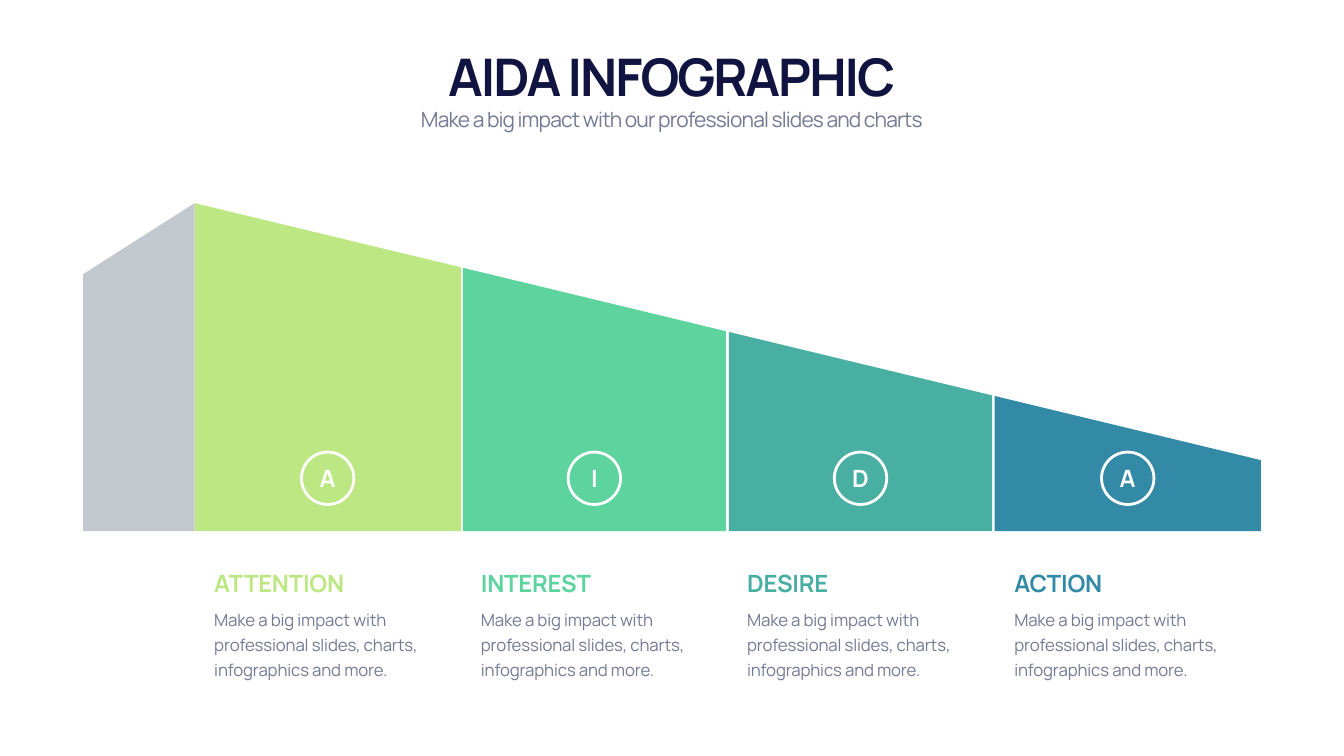
from dataclasses import dataclass

from pptx import Presentation
from pptx.dml.color import RGBColor
from pptx.enum.shapes import MSO_SHAPE
from pptx.enum.text import MSO_ANCHOR, MSO_AUTO_SIZE, PP_ALIGN
from pptx.slide import Slide
from pptx.text.text import TextFrame
from pptx.util import Inches, Pt

FONT = "Manrope"
NAVY = RGBColor(0x11, 0x13, 0x40)
SLATE = RGBColor(0x74, 0x79, 0x94)
WHITE = RGBColor(0xFF, 0xFF, 0xFF)
GRAY = RGBColor(0xC3, 0xC8, 0xCE)
LIME = RGBColor(0xBC, 0xE7, 0x83)
GREEN = RGBColor(0x5D, 0xD3, 0x9E)
TEAL = RGBColor(0x49, 0xAF, 0xA3)
BLUE = RGBColor(0x33, 0x8A, 0xA7)

WEDGE_LEFT, WEDGE_RIGHT = 3.86, 25.01
WEDGE_TOP, WEDGE_END, BASE = 4.03, 9.13, 10.54
SIDE_LEFT, SIDE_TOP = 1.65, 5.44
BADGE_SIZE, BADGE_TOP = 1.04, 8.97
TEXT_OFFSET, TEXT_WIDTH = 2.34, 4.5
DESCRIPTION = "Make a big impact with professional slides, charts, infographics and more."


@dataclass(frozen=True)
class Stage:
    name: str
    left: float
    right: float
    color: RGBColor

    @property
    def center(self) -> float:
        return (self.left + self.right) / 2


STAGES = (
    Stage("ATTENTION", WEDGE_LEFT, 9.14, LIME),
    Stage("INTEREST", 9.18, 14.4, GREEN),
    Stage("DESIRE", 14.46, 19.68, TEAL),
    Stage("ACTION", 19.73, WEDGE_RIGHT, BLUE),
)


def slope_y(x: float) -> float:
    """Height of the wedge's sloping edge at x."""
    share = (x - WEDGE_LEFT) / (WEDGE_RIGHT - WEDGE_LEFT)
    return WEDGE_TOP + share * (WEDGE_END - WEDGE_TOP)


def write_text(
    frame: TextFrame,
    text: str,
    *,
    size: float,
    color: RGBColor,
    bold: bool = False,
    spacing: float = 0,
    align: PP_ALIGN = PP_ALIGN.LEFT,
    anchor: MSO_ANCHOR = MSO_ANCHOR.TOP,
    line_spacing: Pt | float = 1.0,
    wrap: bool = True,
    grow: bool = True,
) -> None:
    frame.word_wrap = wrap
    frame.auto_size = MSO_AUTO_SIZE.SHAPE_TO_FIT_TEXT if grow else MSO_AUTO_SIZE.NONE
    frame.vertical_anchor = anchor
    frame.margin_left = frame.margin_right = Inches(0.09)
    frame.margin_top = frame.margin_bottom = Inches(0.05)
    paragraph = frame.paragraphs[0]
    paragraph.alignment = align
    paragraph.line_spacing = line_spacing
    paragraph.space_before = Pt(0)
    run = paragraph.add_run()
    run.text = text
    run.font.name = FONT
    run.font.size = Pt(size)
    run.font.bold = bold
    run.font.color.rgb = color
    run._r.get_or_add_rPr().set("spc", str(round(spacing * 100)))


def place(shape, left: float, top: float, width: float, height: float) -> None:
    shape.left, shape.top = Inches(left), Inches(top)
    shape.width, shape.height = Inches(width), Inches(height)


def add_panel(slide: Slide, left: float, left_top: float,
              right: float, right_top: float, color: RGBColor) -> None:
    """Draw an upright panel with a slanted top and its foot on the base line."""
    corners = [(left, left_top), (right, right_top), (right, BASE), (left, BASE)]
    points = [(Inches(x), Inches(y)) for x, y in corners]
    builder = slide.shapes.build_freeform(*points[0])
    builder.add_line_segments(points[1:], close=True)
    shape = builder.convert_to_shape()
    shape.shadow.inherit = False
    shape.fill.solid()
    shape.fill.fore_color.rgb = color
    shape.line.fill.background()


def add_badge(slide: Slide, stage: Stage) -> None:
    badge = slide.shapes.add_shape(
        MSO_SHAPE.OVAL, Inches(stage.center - BADGE_SIZE / 2), Inches(BADGE_TOP),
        Inches(BADGE_SIZE), Inches(BADGE_SIZE))
    badge.shadow.inherit = False
    badge.fill.background()
    badge.line.color.rgb = WHITE
    badge.line.width = Pt(4)
    write_text(badge.text_frame, stage.name[0], size=34, color=WHITE, bold=True,
               spacing=-0.3, align=PP_ALIGN.CENTER, anchor=MSO_ANCHOR.MIDDLE,
               wrap=False, grow=False)


def add_caption(slide: Slide, stage: Stage) -> None:
    left = Inches(stage.center - TEXT_OFFSET)
    heading = slide.shapes.add_textbox(left, Inches(11.22), Inches(TEXT_WIDTH), Inches(0.67))
    write_text(heading.text_frame, stage.name, size=34, color=stage.color, bold=True,
               spacing=-0.3, anchor=MSO_ANCHOR.BOTTOM)
    details = slide.shapes.add_textbox(left, Inches(11.94), Inches(TEXT_WIDTH), Inches(1.59))
    write_text(details.text_frame, DESCRIPTION, size=24, color=SLATE,
               spacing=-0.2, line_spacing=Pt(36))


def add_titles(slide: Slide) -> None:
    title, subtitle = slide.shapes.title, slide.placeholders[1]
    place(title, 1.66, 0.82, 23.33, 1.35)
    write_text(title.text_frame, "AIDA INFOGRAPHIC", size=74, color=NAVY, bold=True,
               spacing=-2.9, align=PP_ALIGN.CENTER, anchor=MSO_ANCHOR.BOTTOM)
    place(subtitle, 1.66, 2.07, 23.33, 0.61)
    write_text(subtitle.text_frame, "Make a big impact with our professional slides and charts",
               size=30, color=SLATE, spacing=-1.2, align=PP_ALIGN.CENTER)


def main() -> None:
    presentation = Presentation()
    presentation.slide_width, presentation.slide_height = Inches(26.66), Inches(15)
    slide = presentation.slides.add_slide(presentation.slide_layouts[0])
    add_titles(slide)
    add_panel(slide, SIDE_LEFT, SIDE_TOP, WEDGE_LEFT, WEDGE_TOP, GRAY)
    for stage in STAGES:
        add_panel(slide, stage.left, slope_y(stage.left),
                  stage.right, slope_y(stage.right), stage.color)
        add_badge(slide, stage)
        add_caption(slide, stage)
    presentation.save("out.pptx")


if __name__ == "__main__":
    main()
